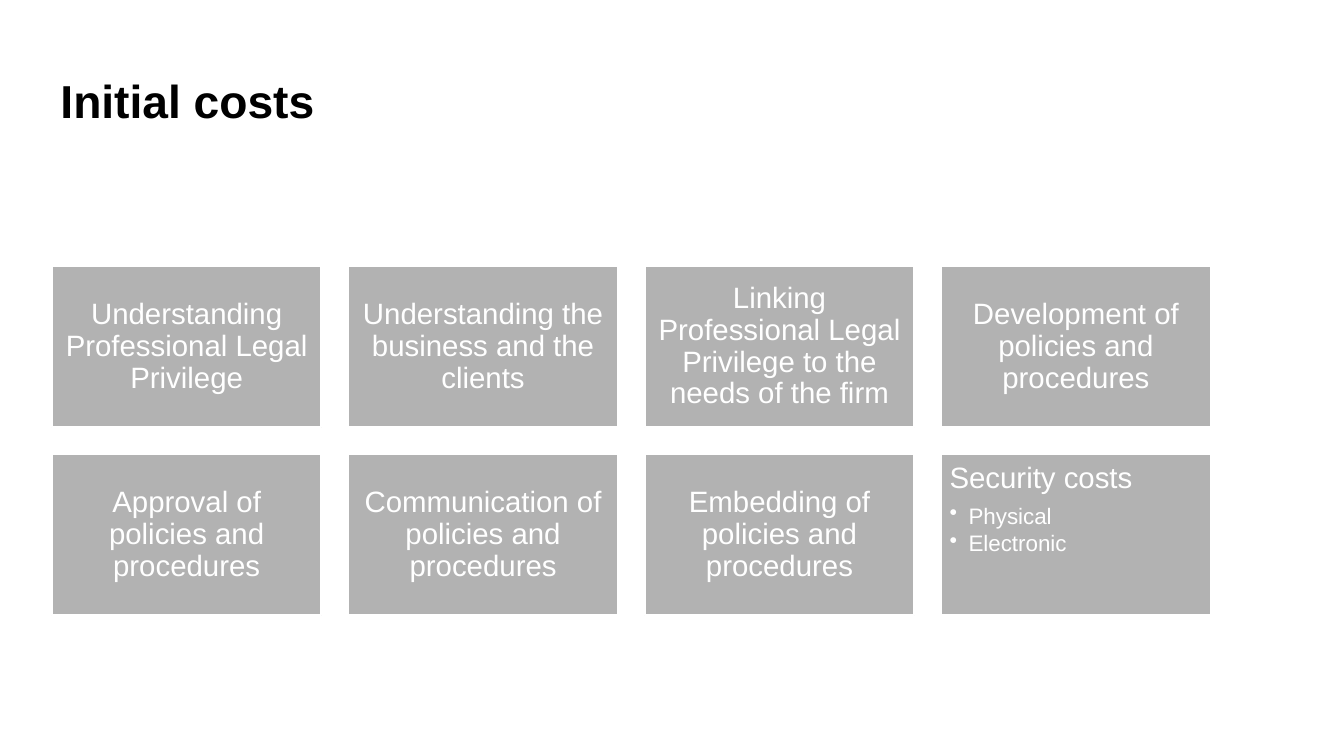
import pptx
import pptx.dml.color
import pptx.enum.shapes
import pptx.enum.text
import pptx.util
from lxml import etree
from pptx.util import Cm, Pt

BLACK = pptx.dml.color.RGBColor(0x00, 0x00, 0x00)
WHITE = pptx.dml.color.RGBColor(0xFF, 0xFF, 0xFF)
GREY = pptx.dml.color.RGBColor(0xB2, 0xB2, 0xB2)

ALIGN = pptx.enum.text.PP_ALIGN
ANCHOR = pptx.enum.text.MSO_ANCHOR

COSTS = [
    ["Understanding Professional Legal Privilege"],
    ["Understanding the business and the clients"],
    ["Linking Professional Legal Privilege to the needs of the firm"],
    ["Development of policies and procedures"],
    ["Approval of policies and procedures"],
    ["Communication of policies and procedures"],
    ["Embedding of policies and procedures"],
    ["Security costs", "Physical", "Electronic"],
]
COLUMNS = 4
LEFT, TOP = 1.31, 6.71
WIDTH, HEIGHT, GAP = 6.79, 4.06, 0.68


def style_paragraph(para, size, color, bold=False):
    para.line_spacing = 0.9
    para.font.name = "Arial"
    para.font.size = Pt(size)
    para.font.bold = bold
    para.font.color.rgb = color


def add_bullet(para):
    properties = para._p.get_or_add_pPr()
    properties.set("marL", str(Cm(0.48)))
    properties.set("indent", str(-Cm(0.48)))
    bullet = etree.SubElement(properties, pptx.oxml.ns.qn("a:buChar"))
    bullet.set("char", "•")


deck = pptx.Presentation()
deck.slide_width = Cm(33.87)
deck.slide_height = Cm(19.05)
page = deck.slides.add_slide(deck.slide_layouts[5])

# Title
title = page.shapes.title
title.left, title.top = Cm(1.27), Cm(1.02)
title.width, title.height = Cm(25.78), Cm(3.18)
title.text_frame.text = "Initial costs"
title.text_frame.auto_size = pptx.enum.text.MSO_AUTO_SIZE.NONE
title.text_frame.vertical_anchor = ANCHOR.MIDDLE
title.text_frame.paragraphs[0].alignment = ALIGN.LEFT
style_paragraph(title.text_frame.paragraphs[0], 33, BLACK, bold=True)

# Grid of cost boxes
for index, (heading, *details) in enumerate(COSTS):
    row, column = divmod(index, COLUMNS)
    box = page.shapes.add_shape(
        pptx.enum.shapes.MSO_SHAPE.RECTANGLE,
        Cm(LEFT + column * (WIDTH + GAP)), Cm(TOP + row * (HEIGHT + GAP)),
        Cm(WIDTH), Cm(HEIGHT))
    box.shadow.inherit = False
    box.fill.solid()
    box.fill.fore_color.rgb = GREY
    box.line.color.rgb = WHITE
    box.line.width = Pt(1.5)

    frame = box.text_frame
    frame.word_wrap = True
    frame.margin_left = frame.margin_right = Cm(0.21)
    frame.margin_top = frame.margin_bottom = Cm(0.21)
    frame.vertical_anchor = ANCHOR.TOP if details else ANCHOR.MIDDLE
    frame.text = heading
    para = frame.paragraphs[0]
    para.alignment = ALIGN.LEFT if details else ALIGN.CENTER
    para.space_after = Pt(7.5)
    style_paragraph(para, 21, WHITE)

    # Bulleted details under the heading
    for detail in details:
        para = frame.add_paragraph()
        para.text = detail
        para.level = 1
        para.alignment = ALIGN.LEFT
        add_bullet(para)
        para.space_after = Pt(2.5)
        style_paragraph(para, 16, WHITE)

deck.save("out.pptx")
